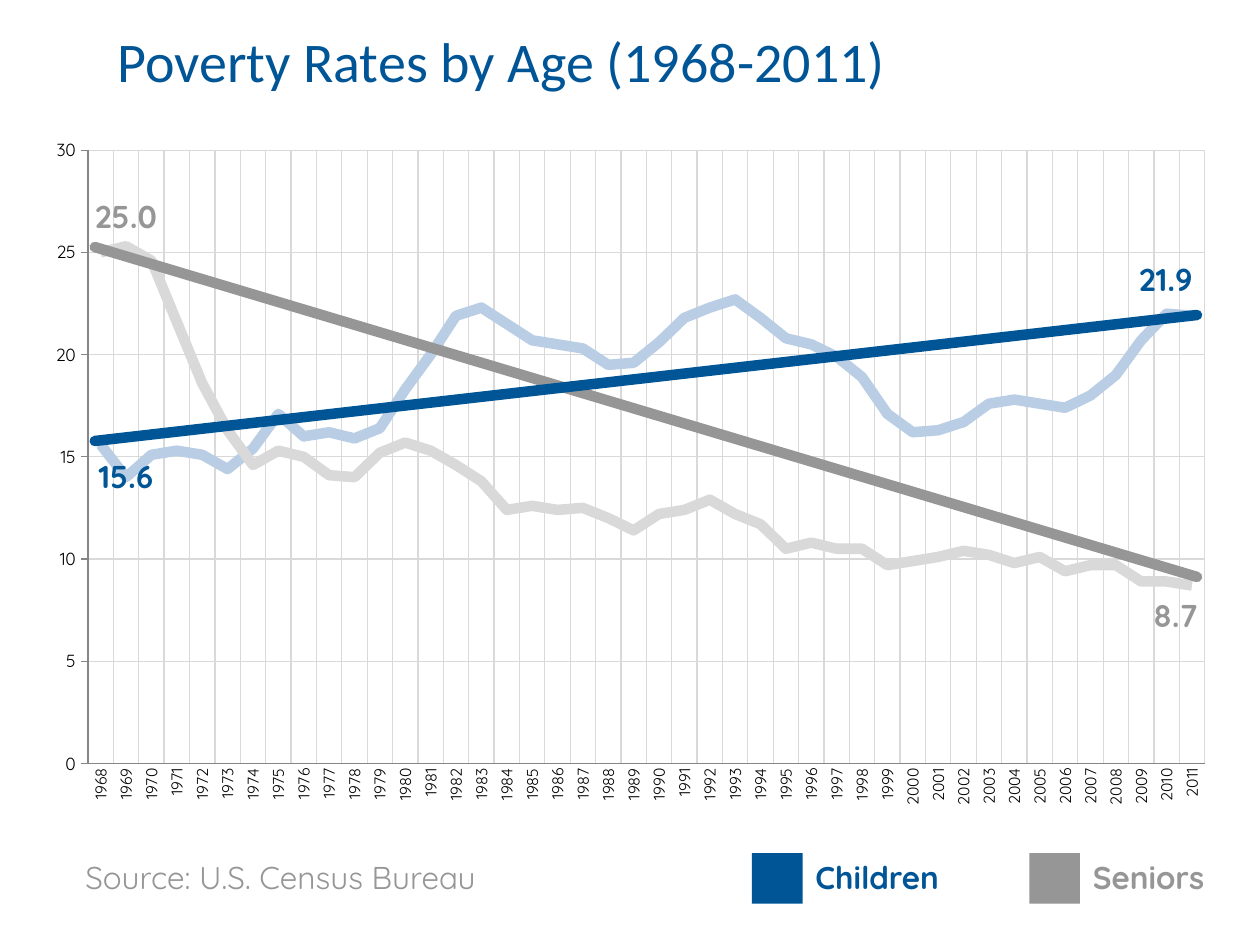
from lxml.etree import SubElement
from pptx import Presentation
from pptx.chart.data import CategoryChartData
from pptx.dml.color import RGBColor
from pptx.enum.chart import XL_CHART_TYPE, XL_TICK_MARK
from pptx.enum.shapes import MSO_CONNECTOR, MSO_SHAPE
from pptx.enum.text import MSO_ANCHOR, PP_ALIGN
from pptx.oxml import parse_xml
from pptx.oxml.ns import nsdecls, qn
from pptx.util import Cm, Pt

COLORS = {
    "children": "005596", "seniors": "969696",
    "children_light": "B9CDE5", "seniors_light": "D9D9D9",
    "grid": "D9D9D9", "axis": "868686", "black": "000000",
}
CHILDREN_RATES = [
    15.6, 14, 15.1, 15.3, 15.1, 14.4, 15.4, 17.1, 16, 16.2, 15.9,
    16.4, 18.3, 20, 21.9, 22.3, 21.5, 20.7, 20.5, 20.3, 19.5, 19.6,
    20.6, 21.8, 22.3, 22.7, 21.8, 20.8, 20.5, 19.9, 18.9, 17.1, 16.2,
    16.3, 16.7, 17.6, 17.8, 17.6, 17.4, 18, 19, 20.7, 22, 21.9,
]
SENIORS_RATES = [
    25, 25.3, 24.6, 21.6, 18.6, 16.3, 14.6, 15.3, 15, 14.1, 14,
    15.2, 15.7, 15.3, 14.6, 13.8, 12.4, 12.6, 12.4, 12.5, 12, 11.4,
    12.2, 12.4, 12.9, 12.2, 11.7, 10.5, 10.8, 10.5, 10.5, 9.7, 9.9,
    10.1, 10.4, 10.2, 9.8, 10.1, 9.4, 9.7, 9.7, 8.9, 8.9, 8.7,
]


def format_font(font, color, **values):
    for name, value in values.items():
        setattr(font, name, value)
    font.color.rgb = RGBColor.from_string(COLORS[color])


def add_label(shapes, text, left, top, width, color, bold=True, alignment=PP_ALIGN.LEFT):
    box = shapes.add_textbox(Cm(left), Cm(top), Cm(width), Cm(1.03))
    box.text_frame.word_wrap = True
    paragraph = box.text_frame.paragraphs[0]
    paragraph.text = text
    paragraph.alignment = alignment
    format_font(paragraph.runs[0].font, color, name="Quicksand", size=Pt(18), bold=bold)


presentation = Presentation()
presentation.slide_width = Cm(25.4)
presentation.slide_height = Cm(19.05)
slide = presentation.slides.add_slide(presentation.slide_layouts[5])

title = slide.shapes.title
title_place = {"left": Cm(2.11), "top": Cm(0.53), "width": Cm(22.86), "height": Cm(1.37)}
for name, value in title_place.items():
    setattr(title, name, value)
title_format = {"margin_top": 0, "margin_bottom": 0, "vertical_anchor": MSO_ANCHOR.MIDDLE}
for name, value in title_format.items():
    setattr(title.text_frame, name, value)
title.text_frame.text = "Poverty Rates by Age (1968-2011)"
paragraph = title.text_frame.paragraphs[0]
paragraph.alignment = PP_ALIGN.LEFT
format_font(paragraph.runs[0].font, "children", name="Calibri", size=Pt(32))

chart_data = CategoryChartData()
chart_data.categories = [str(year) for year in range(1968, 2012)]
chart_data.add_series("Series 1", CHILDREN_RATES)
chart_data.add_series("Series 2", SENIORS_RATES)
chart = slide.shapes.add_chart(
    XL_CHART_TYPE.LINE, Cm(0.64), Cm(2.54), Cm(24.13), Cm(13.97), chart_data
).chart
chart.has_legend = False
chart.has_title = False
format_font(chart.font, "black", name="Calibri", size=Pt(10))

for series, color in zip(chart.plots[0].series, ("children_light", "seniors_light")):
    series.smooth = False
    series.format.line.width = Pt(6)
    series.format.line.color.rgb = RGBColor.from_string(COLORS[color])

axes = (
    (chart.category_axis, XL_TICK_MARK.NONE, 9),
    (chart.value_axis, XL_TICK_MARK.OUTSIDE, 10),
)
for axis, tick_mark, size in axes:
    axis.has_major_gridlines = True
    axis.major_tick_mark = tick_mark
    axis.minor_tick_mark = XL_TICK_MARK.NONE
    format_font(axis.tick_labels.font, "black", name="Quicksand", size=Pt(size))
    for line, color in ((axis.major_gridlines.format.line, "grid"), (axis.format.line, "axis")):
        line.width = Pt(0.75)
        line.color.rgb = RGBColor.from_string(COLORS[color])
chart.value_axis.minimum_scale = 0
chart.value_axis.maximum_scale = 30
chart.value_axis.major_unit = 5
label_body = chart.category_axis._element.find(qn("c:txPr")).find(qn("a:bodyPr"))
label_body.set("rot", "-5400000")
label_body.set("vert", "horz")

plot_area = chart._chartSpace.chart.plotArea
for layout in plot_area.findall(qn("c:layout")):
    plot_area.remove(layout)
layout = parse_xml(f"<c:layout {nsdecls('c')}><c:manualLayout/></c:layout>")
layout_values = {
    "layoutTarget": "inner", "xMode": "edge", "yMode": "edge",
    "x": 0.047, "y": 0.035, "w": 0.933, "h": 0.885,
}
for name, value in layout_values.items():
    SubElement(layout[0], qn(f"c:{name}")).set("val", str(value))
plot_area.insert(0, layout)

for index, (text, color) in enumerate((("Children", "children"), ("Seniors", "seniors"))):
    left = 15.16 + 5.59 * index
    group = slide.shapes.add_group_shape()
    swatch = group.shapes.add_shape(
        MSO_SHAPE.RECTANGLE, Cm(left), Cm(17.2), Cm(1.02), Cm(1.02)
    )
    swatch.shadow.inherit = False
    swatch.fill.solid()
    swatch.fill.fore_color.rgb = RGBColor.from_string(COLORS[color])
    swatch.line.fill.background()
    add_label(group.shapes, text, left + 1.03, 17.17, 4.65, color)

add_label(slide.shapes, "Source: U.S. Census Bureau", 1.47, 17.17, 8.46, "seniors", bold=False)

for start, end, color in ((4.98, 11.63, "seniors"), (8.89, 6.35, "children")):
    trend = slide.shapes.add_connector(
        MSO_CONNECTOR.STRAIGHT, Cm(1.91), Cm(start), Cm(24.13), Cm(end)
    )
    trend.line.width = Pt(6)
    trend.line.color.rgb = RGBColor.from_string(COLORS[color])
    trend.line._get_or_add_ln().set("cap", "rnd")
    SubElement(trend._element.spPr, qn("a:effectLst"))

end_values = (
    ("25.0", 1.27, 3.84, "seniors"),
    ("8.7", 22.43, 11.89, "seniors"),
    ("15.6", 1.27, 9.09, "children"),
    ("21.9", 22.23, 5.11, "children"),
)
for text, left, top, color in end_values:
    add_label(slide.shapes, text, left, top, 2.54, color, alignment=PP_ALIGN.CENTER)

presentation.save("out.pptx")
